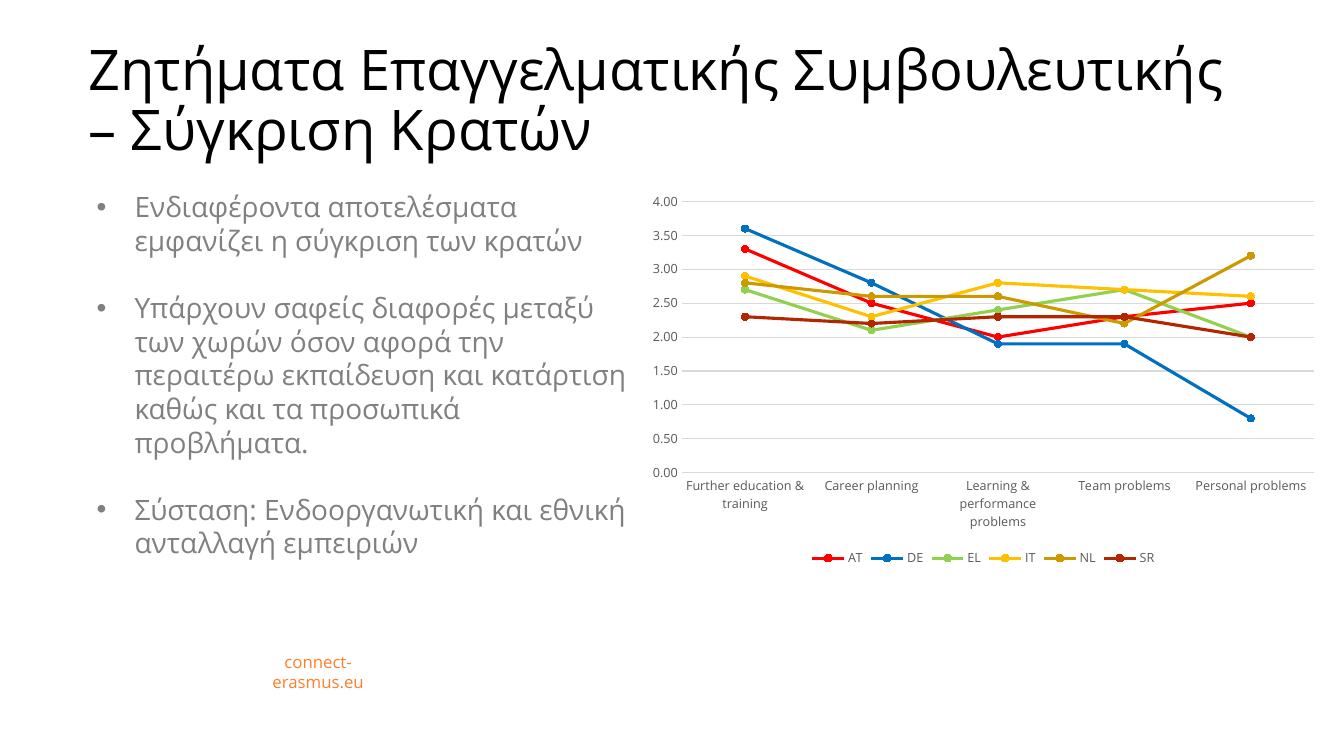
from lxml import etree
from pptx import Presentation
from pptx.chart.data import CategoryChartData
from pptx.dml.color import RGBColor
from pptx.enum.chart import XL_CHART_TYPE as ChartType
from pptx.enum.chart import XL_LEGEND_POSITION as LegendPosition
from pptx.enum.chart import XL_MARKER_STYLE as MarkerStyle
from pptx.enum.chart import XL_TICK_MARK as TickMark
from pptx.enum.text import MSO_ANCHOR as Anchor
from pptx.enum.text import PP_ALIGN as Align
from pptx.oxml.ns import qn
from pptx.util import Pt

BLACK = RGBColor(0x00, 0x00, 0x00)
GRAY = RGBColor(0x80, 0x80, 0x80)
DARK_GRAY = RGBColor(0x59, 0x59, 0x59)
GRID_GRAY = RGBColor(0xD9, 0xD9, 0xD9)
ORANGE = RGBColor(0xFF, 0x7F, 0x2A)
RED = RGBColor(0xFF, 0x00, 0x00)
BLUE = RGBColor(0x00, 0x70, 0xC0)
GREEN = RGBColor(0x92, 0xD0, 0x50)
YELLOW = RGBColor(0xFF, 0xC0, 0x00)
OCHRE = RGBColor(0xCC, 0x99, 0x00)
RUST = RGBColor(0xB2, 0x26, 0x00)

TITLE = "Ζητήματα Επαγγελματικής Συμβουλευτικής – Σύγκριση Κρατών"
FINDINGS = [
    "Ενδιαφέροντα αποτελέσματα εμφανίζει η σύγκριση των κρατών",
    "Υπάρχουν σαφείς διαφορές μεταξύ των χωρών όσον αφορά την "
    "περαιτέρω εκπαίδευση και κατάρτιση καθώς και τα προσωπικά προβλήματα.",
    "Σύσταση: Ενδοοργανωτική και εθνική ανταλλαγή εμπειριών",
]
ISSUES = [
    "Further education & training",
    "Career planning",
    "Learning & performance problems",
    "Team problems",
    "Personal problems",
]
COUNTRIES = [
    ("AT", RED, (3.3, 2.5, 2.0, 2.3, 2.5)),
    ("DE", BLUE, (3.6, 2.8, 1.9, 1.9, 0.8)),
    ("EL", GREEN, (2.7, 2.1, 2.4, 2.7, 2.0)),
    ("IT", YELLOW, (2.9, 2.3, 2.8, 2.7, 2.6)),
    ("NL", OCHRE, (2.8, 2.6, 2.6, 2.2, 3.2)),
    ("SR", RUST, (2.3, 2.2, 2.3, 2.3, 2.0)),
]


class SlideBuilder:
    """Holds the slide style and the current page."""

    typeface = "Open Sans"

    def __init__(self, page):
        self.page = page

    def style_font(self, font, size, color):
        font.name = self.typeface
        font.size = Pt(size)
        font.color.rgb = color

    def add_text(self, place, lines, size, color, anchor=Anchor.TOP,
                 align=Align.LEFT, spacing=1.0, gap=0, bullet_indent=0):
        box = self.page.shapes.add_textbox(*map(Pt, place))
        frame = box.text_frame
        frame.word_wrap = True
        frame.vertical_anchor = anchor
        for index, line in enumerate(lines):
            para = frame.paragraphs[0] if index == 0 else frame.add_paragraph()
            para.text = line
            para.alignment = align
            para.line_spacing = spacing
            if index:
                para.space_before = Pt(gap)
            if bullet_indent:
                self.add_bullet(para, bullet_indent)
            self.style_font(para.font, size, color)

    def add_bullet(self, para, indent):
        properties = para._p.get_or_add_pPr()
        properties.set("marL", str(Pt(indent)))
        properties.set("indent", str(-Pt(indent)))
        etree.SubElement(properties, qn("a:buFont"), typeface="Arial")
        etree.SubElement(properties, qn("a:buChar"), char="•")

    def add_line_chart(self, place, categories, series_rows):
        data = CategoryChartData(number_format="###0.00")
        data.categories = categories
        for name, _, values in series_rows:
            data.add_series(name, values)
        chart = self.page.shapes.add_chart(
            ChartType.LINE_MARKERS, *map(Pt, place), data).chart
        self.style_font(chart.font, 10, BLACK)
        chart.has_title = False

        # Legend
        chart.has_legend = True
        chart.legend.position = LegendPosition.BOTTOM
        chart.legend.include_in_layout = False
        self.style_font(chart.legend.font, 9, DARK_GRAY)

        # Axes
        for axis in (chart.category_axis, chart.value_axis):
            axis.major_tick_mark = axis.minor_tick_mark = TickMark.NONE
            self.style_font(axis.tick_labels.font, 9, DARK_GRAY)
        value_axis = chart.value_axis
        value_axis.minimum_scale = 0
        value_axis.maximum_scale = 4
        value_axis.major_unit = 0.5
        value_axis.tick_labels.number_format = "###0.00"
        value_axis.tick_labels.number_format_is_linked = False
        value_axis.format.line.fill.background()
        for line in (chart.category_axis.format.line,
                     value_axis.major_gridlines.format.line):
            line.color.rgb = GRID_GRAY
            line.width = Pt(0.75)

        # Series
        plot = chart.plots[0]
        plot.vary_by_categories = False
        for series, (_, color, _) in zip(plot.series, series_rows):
            series.smooth = False
            series.format.line.color.rgb = color
            series.format.line.width = Pt(2.25)
            marker = series.marker
            marker.style = MarkerStyle.CIRCLE
            marker.size = 5
            marker.format.fill.solid()
            marker.format.fill.fore_color.rgb = color
            marker.format.line.color.rgb = color


def main():
    deck = Presentation()
    deck.slide_width = Pt(960)
    deck.slide_height = Pt(540)
    builder = SlideBuilder(deck.slides.add_slide(deck.slide_layouts[6]))

    # Title
    builder.add_text((56, 5, 842, 115), [TITLE], 40, BLACK,
                     anchor=Anchor.BOTTOM, spacing=0.9)

    # Findings
    builder.add_text((62, 132, 394.5, 320), FINDINGS, 20, GRAY,
                     gap=24, bullet_indent=27)

    # Country comparison
    builder.add_line_chart((456.5, 132, 492, 276), ISSUES, COUNTRIES)

    # Web address
    builder.add_text((164, 469, 126.5, 21.5), ["connect-erasmus.eu"], 12,
                     ORANGE, anchor=Anchor.MIDDLE, align=Align.CENTER)

    deck.save("out.pptx")


if __name__ == "__main__":
    main()
